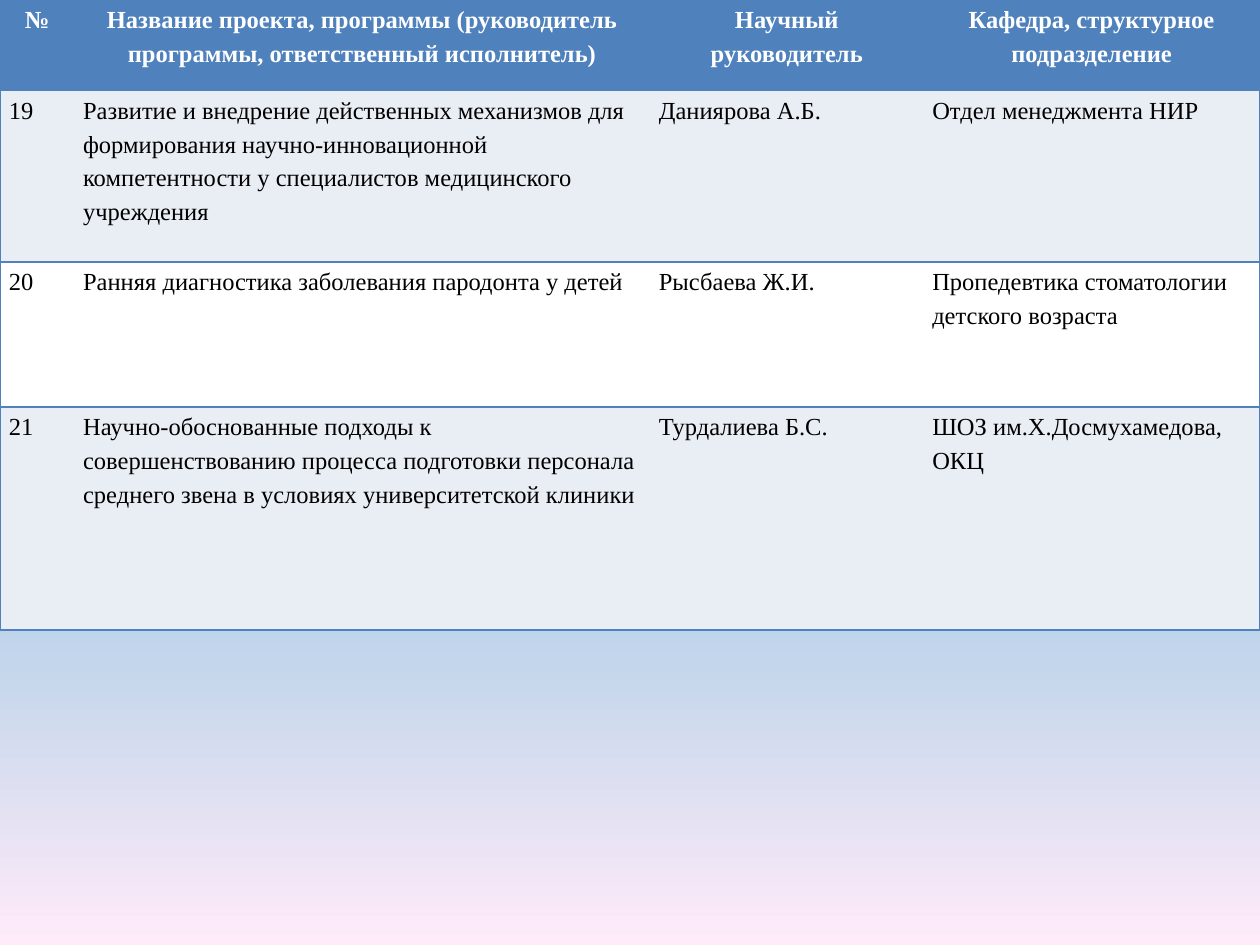
"""Build a slide with a table of research projects on a gradient background."""
from lxml import etree
from pptx import Presentation
from pptx.dml.color import RGBColor
from pptx.enum import text
from pptx.oxml import ns
from pptx.util import Inches, Pt

HEAD = ("№", "Название проекта, программы (руководитель программы, ответственный исполнитель)",
        "Научный руководитель", "Кафедра, структурное подразделение")
ROWS = [
    ("19", "Развитие и внедрение действенных механизмов для формирования "
           "научно-инновационной компетентности у специалистов медицинского учреждения",
     "Даниярова А.Б.", "Отдел менеджмента НИР"),
    ("20", "Ранняя диагностика заболевания пародонта у детей",
     "Рысбаева Ж.И.", "Пропедевтика стоматологии детского возраста"),
    ("21", "Научно-обоснованные подходы к совершенствованию процесса подготовки "
           "персонала среднего звена в условиях университетской клиники",
     "Турдалиева Б.С.", "ШОЗ им.Х.Досмухамедова, ОКЦ"),
]
WIDTHS = (0.59, 4.57, 2.17, 2.67)
HEIGHTS = (0.72, 1.36, 1.15, 1.77)
COLORS = {"blue": "4F81BD", "band": "E9EDF4", "white": "FFFFFF", "black": "000000"}
SKY = [(0, "5E9EFF"), (40, "85C2FF"), (70, "C4D6EB"), (100, "FFEBFA")]
FONT = "Times New Roman"
NO_STYLE = "{2D5ABB26-0587-4C30-8999-92F81FD0307C}"


def add(parent, tag, **attrs):
    return etree.SubElement(parent, ns.qn(tag), attrs)


def paint_sky(slide):
    fill = slide.background.fill
    fill.gradient()
    fill.gradient_angle = 270
    stops = next(slide.background._cSld.iter(ns.qn("a:gsLst")))
    for stop in list(stops):
        stops.remove(stop)
    for pos, color in SKY:
        add(add(stops, "a:gs", pos=str(pos * 1000)), "a:srgbClr", val=color)


def add_edges(cell, sides):
    props = cell._tc.get_or_add_tcPr()
    for side in sides:
        line = add(props, "a:ln" + side, w=str(Pt(1)))
        add(add(line, "a:solidFill"), "a:srgbClr", val=COLORS["blue"])


def fill_cell(cell, words, row, col):
    head, first, last = row == 0, col == 0, col == len(WIDTHS) - 1
    add_edges(cell, "L" * first + "R" * last + "TB")
    cell.fill.solid()
    back = "blue" if head else "band" if row % 2 else "white"
    cell.fill.fore_color.rgb = RGBColor.from_string(COLORS[back])
    cell.margin_left = cell.margin_right = Inches(0.07)
    cell.margin_top = cell.margin_bottom = 0
    cell.text_frame.text = words
    para = cell.text_frame.paragraphs[0]
    align = text.PP_ALIGN
    para.alignment = align.CENTER if head else align.JUSTIFY if first else align.LEFT
    para.line_spacing = 1.25
    if not first:
        para.space_before = para.space_after = Pt(3)
    elif not head:
        props = para._p.get_or_add_pPr()
        props.set("marL", str(Inches(0.38)))
        props.set("indent", str(Inches(-0.38)))
    font = para.runs[0].font
    font.name, font.size, font.bold = FONT, Pt(14), head
    font.color.rgb = RGBColor.from_string(COLORS["white" if head else "black"])


def main():
    deck = Presentation()
    deck.slide_width, deck.slide_height = Inches(10), Inches(7.5)
    slide = deck.slides.add_slide(deck.slide_layouts[6])
    paint_sky(slide)
    data = [HEAD] + ROWS
    frame = slide.shapes.add_table(len(data), len(HEAD), 0, 0,
                                   Inches(sum(WIDTHS)), Inches(sum(HEIGHTS)))
    table = frame.table
    next(table._tbl.iter(ns.qn("a:tableStyleId"))).text = NO_STYLE
    for col, width in zip(table.columns, WIDTHS):
        col.width = Inches(width)
    for row, height in zip(table.rows, HEIGHTS):
        row.height = Inches(height)
    for row, line in enumerate(data):
        for col, words in enumerate(line):
            fill_cell(table.cell(row, col), words, row, col)
    deck.save("out.pptx")


if __name__ == "__main__":
    main()
